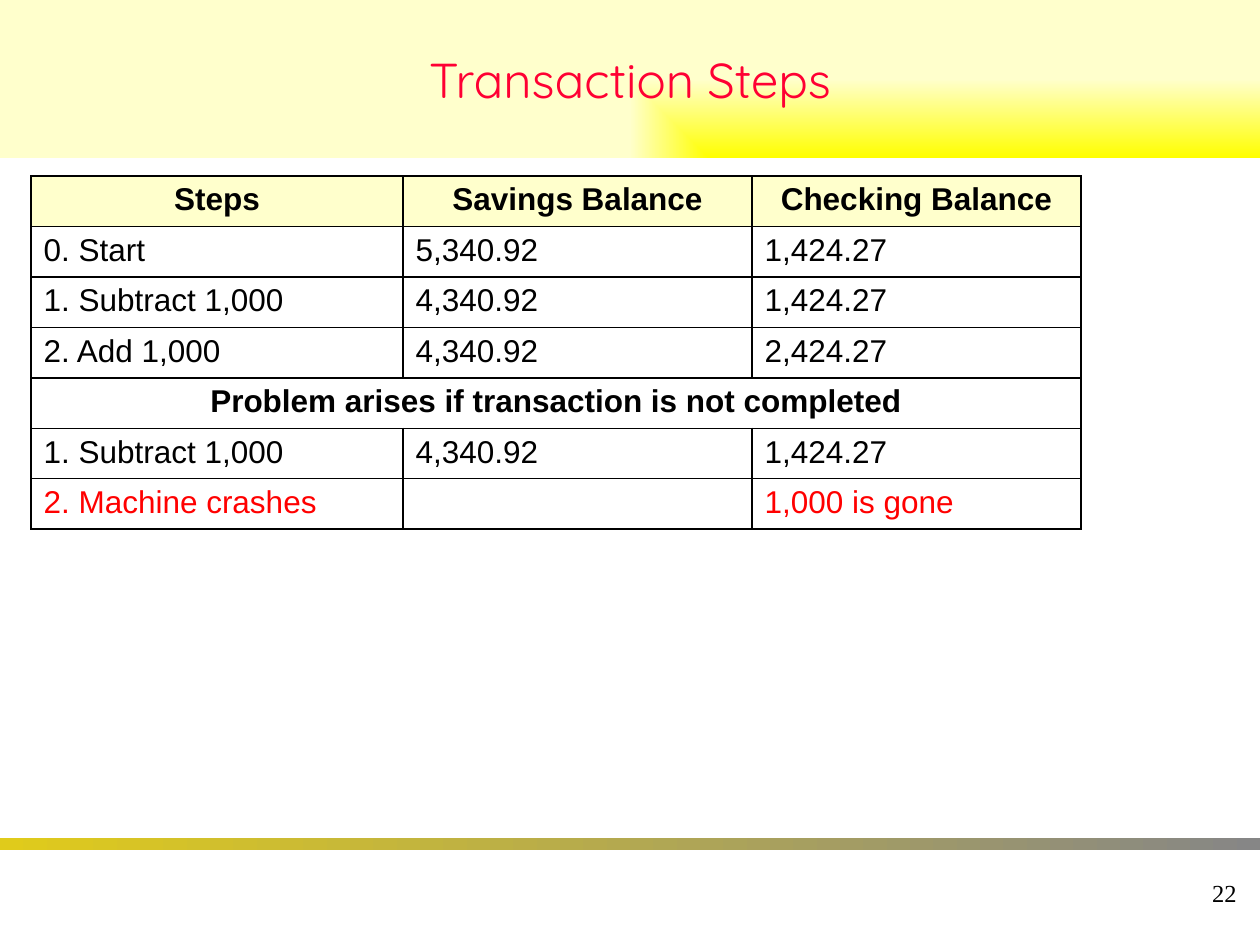
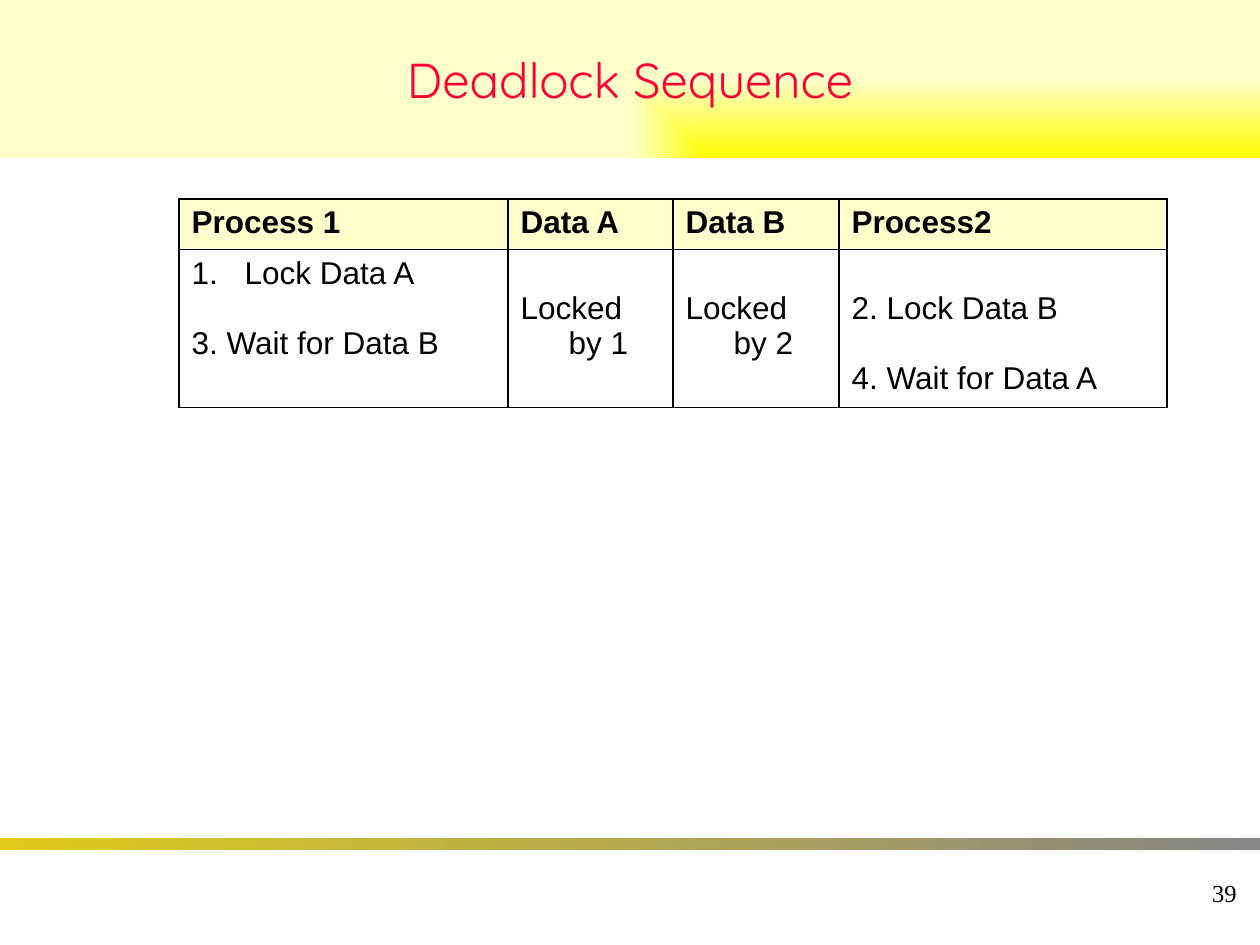
from lxml import etree
from pptx import Presentation
from pptx import util as u
from pptx.dml.color import RGBColor
from pptx.enum import shapes, text
from pptx.oxml import ns

SCALE = 914400 / 126
WIDE, HIGH = 1260, 945
CREAM, YELLOW, BLACK, RED = "FFFFCC", "FFFF00", "000000", "FF0000"
MID = text.PP_ALIGN.CENTER
BODY = {"name": "Arial", "size": u.Pt(18), "bold": False}
HEAD = {**BODY, "bold": True}
TITLE = {"name": "Quicksand", "size": u.Pt(28)}
PAGE = {"name": "Times New Roman", "size": u.Pt(14)}
LINE = 35
STEPS = [
    ["Steps", "Savings Balance", "Checking Balance"],
    ["0. Start", "5,340.92", "1,424.27"],
    ["1. Subtract 1,000", "4,340.92", "1,424.27"],
    ["2. Add 1,000", "4,340.92", "2,424.27"],
    ["Problem arises if transaction is not completed", "", ""],
    ["1. Subtract 1,000", "4,340.92", "1,424.27"],
    ["2. Machine crashes", "", "1,000 is gone"],
]
LOCKS = [
    ["Process 1", "Data A", "Data B", "Process2"],
    ["Lock Data A\n3. Wait for Data B", "Locked by 1", "Locked by 2",
     "2. Lock Data B\n4. Wait for Data A"],
]


def px(n):
    return u.Emu(round(n * SCALE))


def rgb(code):
    return RGBColor.from_string(code)


def node(host, tag, **attrs):
    return etree.SubElement(host, ns.qn(tag), attrs)


def style(font, form, color):
    for key, val in form.items():
        setattr(font, key, val)
    font.color.rgb = rgb(color)


def put(para, words, form, color, align=None):
    run = para.add_run()
    run.text = words
    style(run.font, form, color)
    para.alignment = align


def shade(shape, first, last, corner=False):
    shape.fill.background()
    props = shape._element.spPr
    old = props.find(ns.qn("a:noFill"))
    grad = etree.Element(ns.qn("a:gradFill"), rotWithShape="1")
    stops = node(grad, "a:gsLst")
    for pos, code in (("0", first), ("100000", last)):
        node(node(stops, "a:gs", pos=pos), "a:srgbClr", val=code)
    if corner:
        way = node(grad, "a:path", path="rect")
        node(way, "a:fillToRect", l="100000", t="100000")
    else:
        node(grad, "a:lin", ang="0", scaled="1")
    props.replace(old, grad)


def band(slide, top, high, *tones, **opts):
    shape = slide.shapes.add_shape(shapes.MSO_SHAPE.RECTANGLE,
                                   0, px(top), px(WIDE), px(high))
    shape.shadow.inherit = False
    shape.line.fill.background()
    shade(shape, *tones, **opts)
    return shape


def frame(deck, title, page):
    slide = deck.slides.add_slide(deck.slide_layouts[6])
    band(slide, 838, 12, "E0CB1B", "868686")
    top = band(slide, 0, 158, YELLOW, CREAM, corner=True).text_frame
    top.vertical_anchor = text.MSO_ANCHOR.MIDDLE
    put(top.paragraphs[0], title, TITLE, "FF0033", MID)
    box = slide.shapes.add_textbox(px(987), px(861), px(262), px(63)).text_frame
    box.word_wrap = False
    box.vertical_anchor = text.MSO_ANCHOR.MIDDLE
    put(box.paragraphs[0], page, PAGE, BLACK, text.PP_ALIGN.RIGHT)
    return slide


def edge(cell):
    props = cell._tc.get_or_add_tcPr()
    for spot, side in enumerate(("lnL", "lnR", "lnT", "lnB")):
        line = etree.Element(ns.qn("a:" + side), w=str(u.Pt(1)))
        node(node(line, "a:solidFill"), "a:srgbClr", val=BLACK)
        props.insert(spot, line)


def indent(para, left):
    props = para._p.get_or_add_pPr()
    props.set("marL", str(px(left)))
    props.set("indent", str(px(-left)))
    return props


def write(cell, words, form, color=BLACK, align=None):
    if not words:
        cell.margin_top = cell.margin_bottom = 0
        return
    for spot, line in enumerate(words.split("\n")):
        para = cell.text_frame.add_paragraph() if spot else cell.text_frame.paragraphs[0]
        put(para, line, form, color, align)
        indent(para, 48)
        if spot:
            para.space_before = px(LINE)


def grid(slide, left, top, cols, highs, rows, align=None):
    shape = slide.shapes.add_table(len(rows), len(cols), px(left), px(top),
                                   px(sum(cols)), px(sum(highs)))
    table = shape.table
    table.first_row = table.horz_banding = False
    for col, wide in zip(table.columns, cols):
        col.width = px(wide)
    for r, (row, high) in enumerate(zip(rows, highs)):
        table.rows[r].height = px(high)
        bold = r == 0 or (len(row) > 1 and not any(row[1:]))
        tone = RED if "crashes" in row[0] else BLACK
        for c, words in enumerate(row):
            cell = table.cell(r, c)
            if r == 0:
                cell.fill.solid()
                cell.fill.fore_color.rgb = rgb(CREAM)
            else:
                cell.fill.background()
            edge(cell)
            write(cell, words, HEAD if bold else BODY, tone, align if bold else None)
        if r and bold:
            table.cell(r, 0).merge(table.cell(r, len(cols) - 1))
    return table


def steps(deck):
    slide = frame(deck, "Transaction Steps", "22")
    grid(slide, 31, 176, [372, 349, 329], [48] * len(STEPS), STEPS, MID)


def locks(deck):
    slide = frame(deck, "Deadlock Sequence", "39")
    table = grid(slide, 179, 199, [329, 165, 166, 328], [48, 154], LOCKS)
    for c in range(1, 4):
        table.cell(1, c).margin_top = px(6 + LINE)
    first, last = table.cell(1, 0).text_frame.paragraphs
    indent(last, 53)
    node(indent(first, 53), "a:buAutoNum", type="arabicPeriod")


def main():
    deck = Presentation()
    deck.slide_width, deck.slide_height = px(WIDE), px(HIGH)
    steps(deck)
    locks(deck)
    deck.save("out.pptx")


if __name__ == "__main__":
    main()
